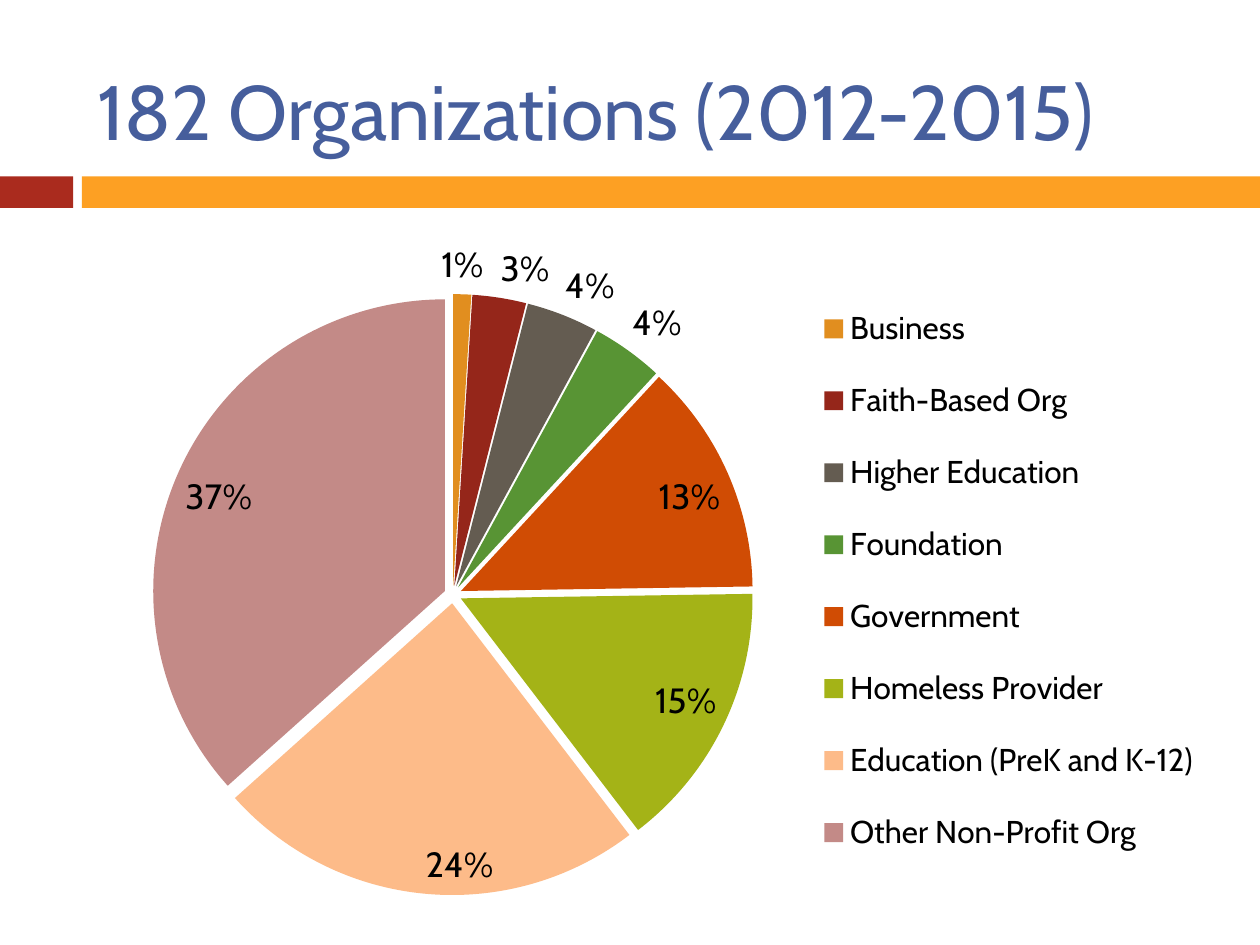
from dataclasses import dataclass

from lxml.etree import SubElement
from pptx import Presentation
from pptx.chart.data import CategoryChartData
from pptx.dml.color import RGBColor
from pptx.enum.chart import XL_CHART_TYPE, XL_LABEL_POSITION, XL_LEGEND_POSITION
from pptx.enum.shapes import MSO_SHAPE
from pptx.enum.text import MSO_ANCHOR, MSO_AUTO_SIZE, PP_ALIGN
from pptx.oxml import parse_xml
from pptx.oxml.ns import nsdecls, qn
from pptx.util import Inches, Pt


@dataclass(frozen=True)
class Theme:
    font: str = "Cabin"
    title: str = "465E9C"
    text: str = "000000"
    red: str = "AA2B1E"
    gold: str = "FDA023"
    head: int = 44
    label: int = 20
    key: int = 18


THEME = Theme()
WIDE, HIGH = 10, 7.5
LEFT = 0.67

# Name, share in percent, slice colour
GROUPS = [
    ("Business", 1, "E18E1F"),
    ("Faith-Based Org", 3, "95261A"),
    ("Higher Education", 4, "645C51"),
    ("Foundation", 4, "589434"),
    ("Government", 13, "D04C04"),
    ("Homeless Provider", 15, "A4B317"),
    ("Education (PreK and K-12)", 24, "FDBB89"),
    ("Other Non-Profit Org", 37, "C38A87"),
]
SMALL = 5  # slices below this share carry their label outside


def style(font, size, color):
    font.name = THEME.font
    font.size = Pt(size)
    font.bold = False
    font.color.rgb = RGBColor.from_string(color)


def place(shape, left, top, width, height):
    shape.left, shape.top = Inches(left), Inches(top)
    shape.width, shape.height = Inches(width), Inches(height)


def add_title(slide, text):
    title = slide.shapes.title
    place(title, LEFT, 0.33, 8.92, 1.08)
    frame = title.text_frame
    frame.text = text
    frame.word_wrap = True
    frame.auto_size = MSO_AUTO_SIZE.NONE
    frame.vertical_anchor = MSO_ANCHOR.MIDDLE
    line = frame.paragraphs[0]
    line.alignment = PP_ALIGN.LEFT
    style(line.runs[0].font, THEME.head, THEME.title)


def add_bar(slide, left, right, color):
    bar = slide.shapes.add_shape(
        MSO_SHAPE.RECTANGLE, Inches(left), Inches(1.4),
        Inches(right - left), Inches(0.25))
    bar.shadow.inherit = False
    bar.fill.solid()
    bar.fill.fore_color.rgb = RGBColor.from_string(color)
    bar.line.fill.background()


def set_layout(node, x, y, w, h, inner=False):
    """Fix a chart part at shares of the chart's size."""
    for old in node.findall(qn("c:layout")):
        node.remove(old)
    layout = parse_xml(f"<c:layout {nsdecls('c')}/>")
    manual = SubElement(layout, qn("c:manualLayout"))
    parts = [("layoutTarget", "inner")] if inner else []
    parts += [("xMode", "edge"), ("yMode", "edge"),
              ("x", x), ("y", y), ("w", w), ("h", h)]
    for tag, value in parts:
        SubElement(manual, qn(f"c:{tag}")).set("val", str(value))
    spot = node.find(qn("c:legendPos"))
    if spot is None:
        node.insert(0, layout)
    else:
        spot.addnext(layout)


def add_labels(series):
    labels = series.data_labels
    labels.show_percentage = True
    labels.show_value = False
    labels.number_format = "0%"
    labels.number_format_is_linked = False
    labels.position = XL_LABEL_POSITION.INSIDE_END
    style(labels.font, THEME.label, THEME.text)
    for i, (_, share, _) in enumerate(GROUPS):
        if share < SMALL:
            label = series.points[i].data_label
            style(label.font, THEME.label, THEME.text)
            label.position = XL_LABEL_POSITION.OUTSIDE_END
    # Outside labels show the percentage as well
    for item in series._element.iter(qn("c:dLbl")):
        item.find(qn("c:showVal")).set("val", "0")
        item.find(qn("c:showPercent")).set("val", "1")


def add_pie(slide):
    data = CategoryChartData()
    data.categories = [name for name, _, _ in GROUPS]
    data.add_series("Series 1", [share for _, share, _ in GROUPS])
    chart = slide.shapes.add_chart(
        XL_CHART_TYPE.PIE, Inches(LEFT), Inches(1.75),
        Inches(9), Inches(5.5), data).chart
    chart.has_title = False
    style(chart.font, 10, THEME.text)

    # Slices, all pulled out a little
    plot = chart.plots[0]
    plot.vary_by_categories = True
    series = plot.series[0]
    for i, (_, _, color) in enumerate(GROUPS):
        fill = series.points[i].format.fill
        fill.solid()
        fill.fore_color.rgb = RGBColor.from_string(color)
    series._element.find(qn("c:dPt")).addprevious(
        parse_xml(f'<c:explosion {nsdecls("c")} val="3"/>'))
    add_labels(series)

    # Legend
    chart.has_legend = True
    legend = chart.legend
    legend.position = XL_LEGEND_POSITION.RIGHT
    legend.include_in_layout = False
    style(legend.font, THEME.key, THEME.text)

    area = chart._chartSpace.chart.plotArea
    set_layout(area, 0.06, 0.1, 0.53, 0.88, inner=True)
    set_layout(legend._element, 0.64, 0.08, 0.35, 0.88)


def main():
    deck = Presentation()
    deck.slide_width, deck.slide_height = Inches(WIDE), Inches(HIGH)
    slide = deck.slides.add_slide(deck.slide_layouts[5])
    # Band under the title
    add_bar(slide, 0, 0.58, THEME.red)
    add_bar(slide, 0.65, WIDE, THEME.gold)
    add_title(slide, "182 Organizations (2012-2015)")
    add_pie(slide)
    deck.save("out.pptx")


main()
